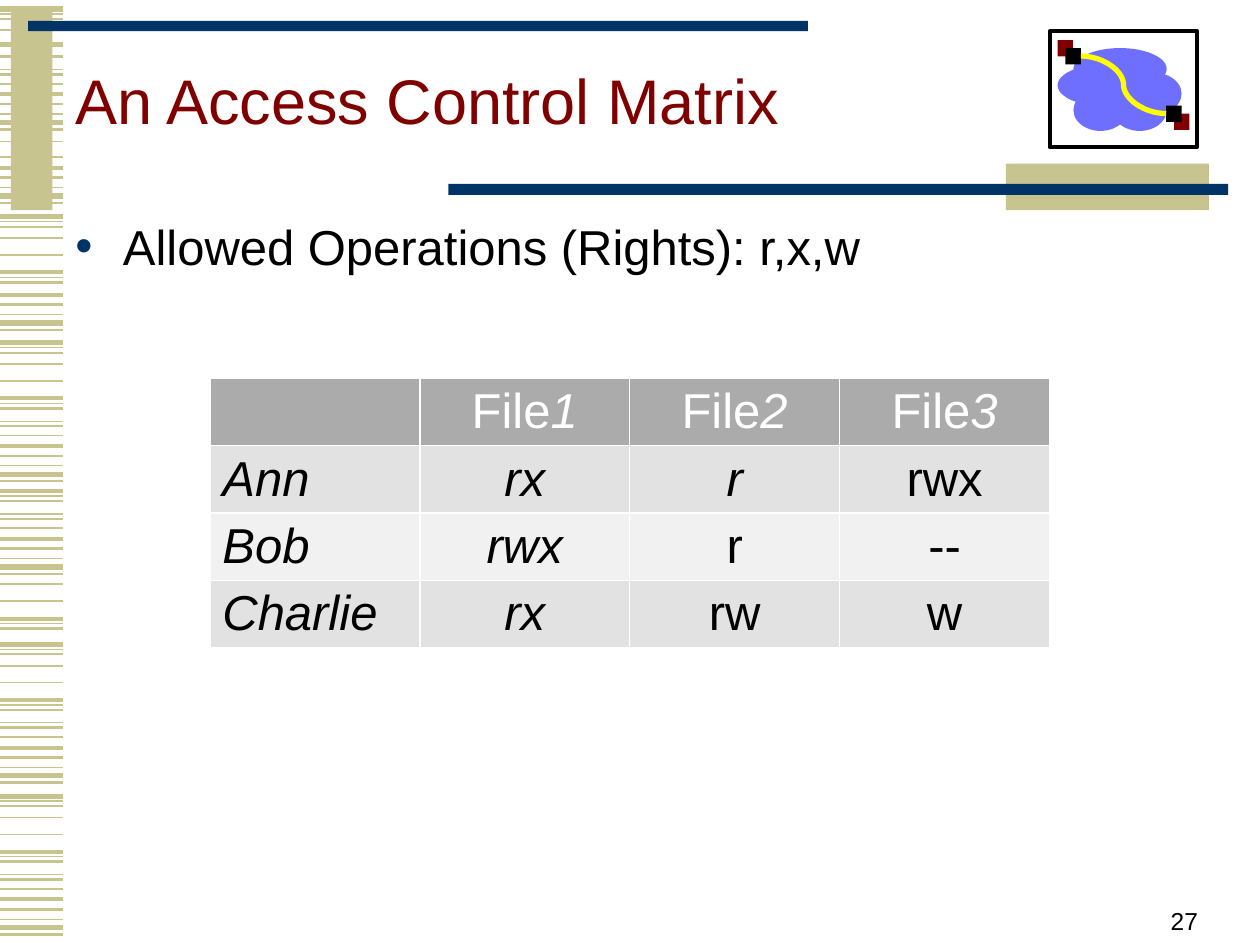
from pptx import Presentation
from pptx import util as u
from pptx.dml import color
from pptx.enum import shapes, text
from pptx.oxml import ns
from lxml import etree

SAND, NAVY, WINE, CLOUD = "C7C48F", "003366", "800000", "6F6FFF"
BLACK, WHITE = "000000", "FFFFFF"
FONT = "Arial"
RECT, OVAL = shapes.MSO_SHAPE.RECTANGLE, shapes.MSO_SHAPE.OVAL
LINE, CURVE = shapes.MSO_CONNECTOR.STRAIGHT, shapes.MSO_CONNECTOR.CURVE
ALIGN, ANCHOR = text.PP_ALIGN, text.MSO_ANCHOR

# Stripe pattern: offset from its start (cm) and weight (pt)
STRIPES = [
    (0, 3), (0.1, 0.75), (0.2, 1), (0.43, 1), (0.77, 1), (1.12, 2.25),
    (1.22, 0.75), (1.32, 1.5), (1.58, 0.75), (1.68, 1.5), (1.87, 1),
    (2.08, 2.25), (2.28, 1.5), (2.48, 0.75), (2.65, 3), (2.79, 1.5),
]
# Each run of the pattern: start (cm), first and end stripe
RUNS = [
    (0.18, 0, 4), (0.89, 0, 1), (-0.18, 7, 16), (2.08, 4, 5),
    (1.3, 10, 16), (4.37, 0, 8), (3.86, 11, 16), (6.91, 0, 16),
    (8.78, 5, 16), (11.35, 3, 8), (12.99, 0, 16), (16.05, 0, 16),
]

# Table rows; an asterisk starts the italic part of a cell
ROWS = [
    ["", "File*1", "File*2", "File*3"],
    ["*Ann", "*rx", "*r", "rwx"],
    ["*Bob", "*rwx", "r", "--"],
    ["*Charlie", "*rx", "rw", "w"],
]
FILLS = ["ABABAB", "E2E2E2", "F1F1F1", "E2E2E2"]


def rgb(code):
    return color.RGBColor.from_string(code)


def add_run(para, words, size, tint=BLACK, slant=False):
    run = para.add_run()
    run.text = words
    font = run.font
    font.name, font.size = FONT, u.Pt(size)
    font.bold, font.italic = False, slant
    font.color.rgb = rgb(tint)


def add_text(slide, box, words, size, tint=BLACK, anchor=ANCHOR.TOP):
    frame = slide.shapes.add_textbox(*map(u.Cm, box)).text_frame
    frame.word_wrap = True
    frame.vertical_anchor = anchor
    para = frame.paragraphs[0]
    add_run(para, words, size, tint)
    return para


def add_bullet(para, mark, tint):
    props = para._p.get_or_add_pPr()
    props.set("marL", str(u.Cm(0.96)))
    props.set("indent", str(u.Cm(-0.96)))
    hue = etree.SubElement(props, ns.qn("a:buClr"))
    etree.SubElement(hue, ns.qn("a:srgbClr"), val=tint)
    etree.SubElement(props, ns.qn("a:buFont"), typeface=FONT)
    etree.SubElement(props, ns.qn("a:buChar"), char=mark)


def add_block(parent, box, fill, kind=RECT, edge=None):
    shape = parent.shapes.add_shape(kind, *map(u.Cm, box))
    shape.shadow.inherit = False
    shape.fill.solid()
    shape.fill.fore_color.rgb = rgb(fill)
    if edge:
        shape.line.color.rgb = rgb(edge)
        shape.line.width = u.Pt(2.25)
    else:
        shape.line.fill.background()


def add_line(parent, ends, tint, weight, kind=LINE):
    line = parent.shapes.add_connector(kind, *map(u.Cm, ends))
    line.line.color.rgb = rgb(tint)
    line.line.width = u.Pt(weight)
    etree.SubElement(line._element.spPr, ns.qn("a:effectLst"))


def add_border(cell, side):
    props = cell._tc.get_or_add_tcPr()
    edge = etree.SubElement(props, ns.qn("a:ln" + side), w=str(u.Pt(1)))
    fill = etree.SubElement(edge, ns.qn("a:solidFill"))
    etree.SubElement(fill, ns.qn("a:srgbClr"), val=WHITE)


def add_stripes(slide):
    group = slide.shapes.add_group_shape()
    for start, first, end in RUNS:
        for step, weight in STRIPES[first:end]:
            y = start + step
            add_line(group, (0, y, 1.27, y), SAND, weight)


def add_bars(slide):
    add_block(slide, (0.22, 0.2, 0.84, 4.04), SAND)
    add_block(slide, (0.57, 0.42, 15.72, 0.21), NAVY)
    add_block(slide, (20.28, 3.3, 4.09, 0.94), SAND)
    add_block(slide, (9.04, 3.71, 15.72, 0.22), NAVY)


def add_cloud(slide):
    group = slide.shapes.add_group_shape()
    add_block(group, (21.16, 0.63, 2.97, 2.34), WHITE, edge=BLACK)
    add_block(group, (23.67, 2.29, 0.31, 0.33), WINE)
    # Puffs: left, top, width
    puffs = [(21.32, 1.3, 1.88), (21.64, 0.97, 1.88), (21.64, 1.8, 1.09),
             (22.43, 1.8, 1.09), (22.43, 1.47, 1.09), (22.73, 1.47, 1.09)]
    for left, top, wide in puffs:
        add_block(group, (left, top, wide, 0.84), CLOUD, OVAL)
    # End points and the link between them
    for left, top, fill in [(21.32, 0.81, WINE), (21.48, 0.97, BLACK),
                            (23.51, 2.13, BLACK)]:
        add_block(group, (left, top, 0.31, 0.33), fill)
    add_line(group, (21.79, 1.13, 23.51, 2.29), "FFFF00", 3, CURVE)


def add_matrix(slide):
    box = map(u.Cm, (4.23, 7.62, 16.93, 5.44))
    table = slide.shapes.add_table(len(ROWS), len(ROWS[0]), *box).table
    table.first_row = table.horz_banding = False
    for r, row in enumerate(ROWS):
        for c, words in enumerate(row):
            cell = table.cell(r, c)
            cell.margin_bottom = u.Cm(0.02)
            for side in "LRTB":
                add_border(cell, side)
            cell.fill.solid()
            cell.fill.fore_color.rgb = rgb(FILLS[r])
            para = cell.text_frame.paragraphs[0]
            para.alignment = ALIGN.CENTER if c else ALIGN.LEFT
            plain, _, slant = words.partition("*")
            for part, lean in [(plain, False), (slant, True)]:
                if part:
                    add_run(para, part, 28, BLACK if r else WHITE, lean)


def main():
    deck = Presentation()
    deck.slide_width, deck.slide_height = u.Cm(25.4), u.Cm(19.05)
    slide = deck.slides.add_slide(deck.slide_layouts[6])

    # Decoration
    add_stripes(slide)
    add_bars(slide)
    add_cloud(slide)

    # Title
    title = add_text(slide, (1.27, 0.43, 19.89, 3.38),
                     "An Access Control Matrix", 36, WINE, ANCHOR.MIDDLE)
    title.line_spacing = 0.85

    # Body
    body = add_text(slide, (1.27, 4.24, 23.55, 13.13),
                    "Allowed Operations (Rights): r,x,w", 28)
    body.space_before = u.Pt(5.6)
    add_bullet(body, "•", NAVY)

    # Page number
    page = add_text(slide, (18.3, 17.71, 6.1, 1.27), "27", 14,
                    anchor=ANCHOR.BOTTOM)
    page.alignment = ALIGN.RIGHT

    # Access rights
    add_matrix(slide)
    deck.save("out.pptx")


if __name__ == "__main__":
    main()
